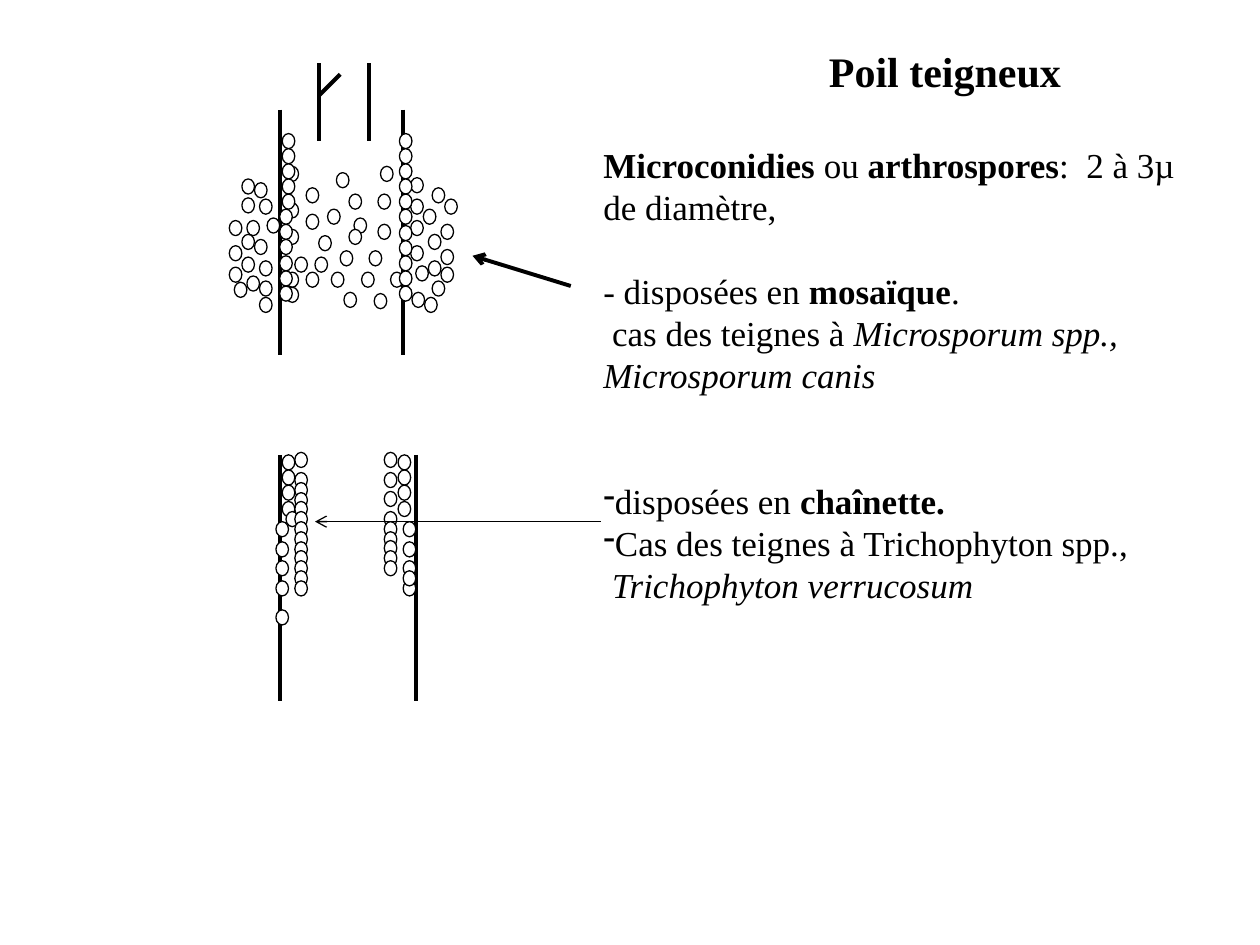
from lxml.etree import SubElement
from pptx import Presentation
from pptx.dml.color import RGBColor
from pptx.enum.shapes import MSO_CONNECTOR, MSO_SHAPE
from pptx.enum.text import MSO_AUTO_SIZE
from pptx.oxml.ns import qn
from pptx.util import Pt

PX = 9144  # EMU per px, 100 px to the inch
COLORS = {"ink": "000000", "paper": "FFFFFF"}
FONT = "Times New Roman"
SPORE_W, SPORE_H = 10, 12
THICK, THIN = 2.25, 0.75

# Top-left corners of the scattered spores around the upper hair
MOSAIC = [
    (227, 132), (243, 149), (302, 132), (267, 137), (227, 161), (260, 166),
    (277, 154), (300, 154), (281, 173), (227, 182), (277, 182), (293, 199),
    (310, 216), (300, 178), (234, 204), (253, 187), (263, 216), (270, 199),
    (227, 216), (287, 216), (243, 170), (250, 204), (243, 216), (227, 228),
    (273, 232), (206, 158), (212, 173), (326, 158), (326, 175), (336, 166),
    (196, 175), (202, 145), (326, 195), (340, 186), (330, 211), (327, 232),
    (202, 190), (192, 157), (206, 207), (340, 207), (326, 141), (182, 175),
    (192, 204), (350, 178), (343, 149), (196, 219), (206, 223), (343, 223),
    (182, 195), (337, 236), (182, 212), (350, 198), (353, 158), (297, 233),
    (350, 212), (186, 224), (206, 236), (192, 142), (192, 186),
]

# Chains of spores: x, first y, step, count
UPPER_CHAINS = [(317, 106, 12.1, 11), (224, 106, 12.1, 5), (222, 166, 12.2, 6)]
LOWER_COLUMNS = [(316, 361, 12.2, 4), (224, 361, 12.2, 4)]
LOWER_CHAINS = [
    (320, 414, 15.6, 4), (320, 453, 0, 1),
    (219, 414, 15.6, 4), (219, 484, 0, 1),
    (227, 406, 0, 1), (234, 359, 0, 1), (234, 375, 7.8, 12),
    (305, 359, 15.6, 3), (305, 406, 7.8, 6),
]

# Paragraphs: blank lines above, bullet, runs of (text, style)
TITLE = [(0, None, [("Poil teigneux", "b")])]
NOTES = [
    (0, None, [("Microconidies ", "b"), ("ou ", ""), ("arthrospores", "b"),
               (":  2 à 3µ de diamètre,", "")]),
    (1, None, [("- disposées en ", ""), ("mosaïque", "b"), (".", "")]),
    (0, None, [(" cas des teignes à ", ""),
               ("Microsporum spp., Microsporum canis", "i")]),
    (2, "-", [("disposées en ", ""), ("chaînette.", "b")]),
    (0, "-", [("Cas des teignes à Trichophyton spp.,", "")]),
    (0, None, [(" ", ""), ("Trichophyton verrucosum", "i")]),
]


def color(name):
    return RGBColor.from_string(COLORS[name])


class Sketch:
    def __init__(self, slide):
        self.shapes = slide.shapes

    def line(self, x1, y1, x2, y2, width=THICK, arrow=False):
        c = self.shapes.add_connector(
            MSO_CONNECTOR.STRAIGHT, *(v * PX for v in (x1, y1, x2, y2)))
        c.line.color.rgb = color("ink")
        c.line.width = Pt(width)
        if arrow:
            SubElement(c.line._get_or_add_ln(), qn("a:tailEnd"), type="arrow")
        SubElement(c._element.spPr, qn("a:effectLst"))

    def walls(self, xs, top, bottom):
        for x in xs:
            self.line(x, top, x, bottom)

    def spore(self, x, y):
        sp = self.shapes.add_shape(
            MSO_SHAPE.OVAL, x * PX, y * PX, SPORE_W * PX, SPORE_H * PX)
        sp.shadow.inherit = False
        sp.fill.solid()
        sp.fill.fore_color.rgb = color("paper")
        sp.line.color.rgb = color("ink")
        sp.line.width = Pt(THIN)

    def chains(self, chains):
        for x, top, step, count in chains:
            for i in range(count):
                self.spore(x, round(top + i * step))

    def text(self, x, y, w, h, size, paragraphs):
        tf = self.shapes.add_textbox(x * PX, y * PX, w * PX, h * PX).text_frame
        tf.word_wrap = True
        tf.auto_size = MSO_AUTO_SIZE.SHAPE_TO_FIT_TEXT
        leading = size * 1.2
        for i, (blank_lines, bullet, runs) in enumerate(paragraphs):
            p = tf.add_paragraph() if i else tf.paragraphs[0]
            p.line_spacing = Pt(leading)
            p.space_before = Pt(blank_lines * leading)
            if bullet:
                pPr = p._p.get_or_add_pPr()
                SubElement(pPr, qn("a:buFontTx"))
                SubElement(pPr, qn("a:buChar"), char=bullet)
            for words, style in runs:
                r = p.add_run()
                r.text = words
                r.font.name = FONT
                r.font.size = Pt(size)
                r.font.bold = "b" in style
                r.font.italic = "i" in style
                r.font.color.rgb = color("ink")


def main():
    prs = Presentation()
    prs.slide_width, prs.slide_height = 1000 * PX, 750 * PX
    s = Sketch(prs.slides.add_slide(prs.slide_layouts[6]))

    # Upper hair: mosaic
    s.walls((222, 320), 87, 282)
    for x, y in MOSAIC:
        s.spore(x, y)
    s.chains(UPPER_CHAINS)
    s.walls((253, 293), 50, 112)
    s.line(253, 76, 270, 59)

    # Lower hair: chains
    s.walls((222, 330), 361, 556)
    s.chains(LOWER_COLUMNS + LOWER_CHAINS)

    s.text(648, 31, 289, 50, 24, TITLE)
    s.text(469, 109, 500, 380, 20, NOTES)
    s.line(453, 227, 375, 203, arrow=True)
    s.line(477, 414, 250, 414, width=THIN, arrow=True)

    prs.save("out.pptx")


if __name__ == "__main__":
    main()
